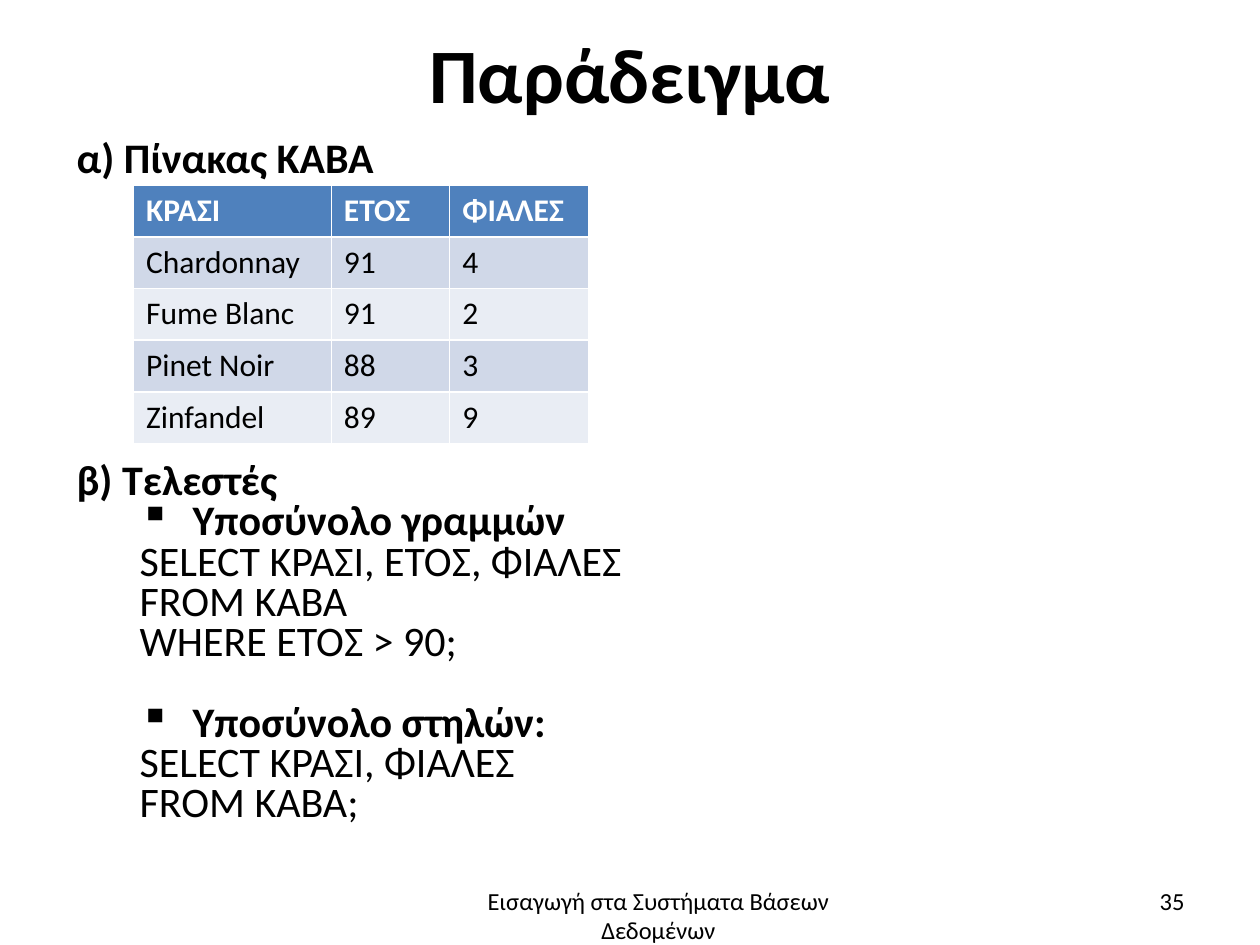
from dataclasses import dataclass

from lxml import etree
from pptx import Presentation
from pptx.dml.color import RGBColor
from pptx.enum import text as tx
from pptx.oxml import ns
from pptx.util import Inches, Pt

FONT = "Calibri"
COLORS = {"ink": "000000", "head": "4F81BD", "white": "FFFFFF",
          "odd": "D0D8E8", "even": "E9EDF4"}
LEFT, MID, RIGHT, JUST = (tx.PP_ALIGN.LEFT, tx.PP_ALIGN.CENTER,
                          tx.PP_ALIGN.RIGHT, tx.PP_ALIGN.JUSTIFY)


@dataclass
class Line:
    text: str
    bold: bool = False
    level: int = 0
    bullet: bool = False
    before: float = 0


@dataclass
class Note:
    text: str
    box: tuple
    align: tx.PP_ALIGN
    anchor: tx.MSO_ANCHOR


PITCH = 23  # height in points of one line of the body
BODY = [
    Line("α) Πίνακας ΚΑΒΑ", bold=True),
    Line("β) Τελεστές", bold=True, before=7 * PITCH),
    Line("Υποσύνολο γραμμών", bold=True, level=1, bullet=True),
    Line("SELECT ΚΡΑΣΙ, ΕΤΟΣ, ΦΙΑΛΕΣ", level=1),
    Line("FROM ΚΑΒΑ", level=1),
    Line("WHERE ΕΤΟΣ > 90;", level=1),
    Line("Υποσύνολο στηλών:", bold=True, level=1, bullet=True, before=PITCH),
    Line("SELECT ΚΡΑΣΙ, ΦΙΑΛΕΣ", level=1),
    Line("FROM ΚΑΒΑ;", level=1),
]
INDENTS = [(0.5, -0.5), (0.92, -0.42)]
WINES = [
    ("ΚΡΑΣΙ", "ΕΤΟΣ", "ΦΙΑΛΕΣ"),
    ("Chardonnay", "91", "4"),
    ("Fume Blanc", "91", "2"),
    ("Pinet Noir", "88", "3"),
    ("Zinfandel", "89", "9"),
]
COLS = [1.57, 0.94, 1.1]
ROW = 0.41
NOTES = [
    Note("Εισαγωγή στα Συστήματα Βάσεων Δεδομένων", (3.48, 6.98, 3.49, 0.55),
         MID, tx.MSO_ANCHOR.TOP),
    Note("35", (7.17, 6.95, 2.33, 0.4), RIGHT, tx.MSO_ANCHOR.MIDDLE),
]


def style(para, size: float, bold: bool = False, color: str = "ink",
          align: tx.PP_ALIGN = LEFT) -> None:
    font = para.font
    font.name, font.size, font.bold = FONT, Pt(size), bold
    font.color.rgb = RGBColor.from_string(COLORS[color])
    para.alignment = align


def add_title(slide, label: str) -> None:
    title = slide.shapes.title
    title.left, title.top, title.width, title.height = map(
        Inches, (0.04, -0.11, 9.92, 1.38))
    title.text_frame.text = label
    title.text_frame.vertical_anchor = tx.MSO_ANCHOR.MIDDLE
    style(title.text_frame.paragraphs[0], 44, True, align=MID)


def add_box(slide, box: tuple):
    frame = slide.shapes.add_textbox(*map(Inches, box)).text_frame
    frame.word_wrap = True
    return frame


def set_indent(para, line: Line) -> None:
    """Give the hanging indent of the level, and the square bullet if any."""
    props = para._p.get_or_add_pPr()
    left, hang = INDENTS[line.level]
    props.set("marL", str(Inches(left)))
    props.set("indent", str(Inches(hang)))
    if line.bullet:
        mark = etree.Element(ns.qn("a:buChar"), char="▪")
        props.insert_element_before(mark, "a:tabLst", "a:defRPr", "a:extLst")


def add_body(slide) -> None:
    frame = add_box(slide, (0.51, 1.07, 5.98, 5.59))
    frame.auto_size = tx.MSO_AUTO_SIZE.SHAPE_TO_FIT_TEXT
    for i, line in enumerate(BODY):
        para = frame.add_paragraph() if i else frame.paragraphs[0]
        para.text, para.level = line.text, line.level
        para.line_spacing, para.space_before = 0.8, Pt(line.before)
        style(para, 24, line.bold, align=JUST if line.bold else LEFT)
        # Code lines start at the bullet's edge, as the hanging indent does
        set_indent(para, line)


def add_wines(slide) -> None:
    table = slide.shapes.add_table(
        len(WINES), len(COLS), Inches(1.06), Inches(1.47),
        Inches(sum(COLS)), Inches(ROW * len(WINES))).table
    for col, width in zip(table.columns, COLS):
        col.width = Inches(width)
    for r, row in enumerate(WINES):
        tint = "head" if r == 0 else "odd" if r % 2 else "even"
        for c, value in enumerate(row):
            cell = table.cell(r, c)
            cell.text = value
            cell.fill.solid()
            cell.fill.fore_color.rgb = RGBColor.from_string(COLORS[tint])
            style(cell.text_frame.paragraphs[0], 18, r == 0,
                  "ink" if r else "white")


def add_note(slide, note: Note) -> None:
    frame = add_box(slide, note.box)
    frame.text = note.text
    frame.vertical_anchor = note.anchor
    style(frame.paragraphs[0], 14, align=note.align)


def main() -> None:
    deck = Presentation()
    deck.slide_width, deck.slide_height = Inches(10), Inches(7.5)
    slide = deck.slides.add_slide(deck.slide_layouts[5])
    add_title(slide, "Παράδειγμα")
    add_body(slide)
    add_wines(slide)
    for note in NOTES:
        add_note(slide, note)
    deck.save("out.pptx")


if __name__ == "__main__":
    main()
